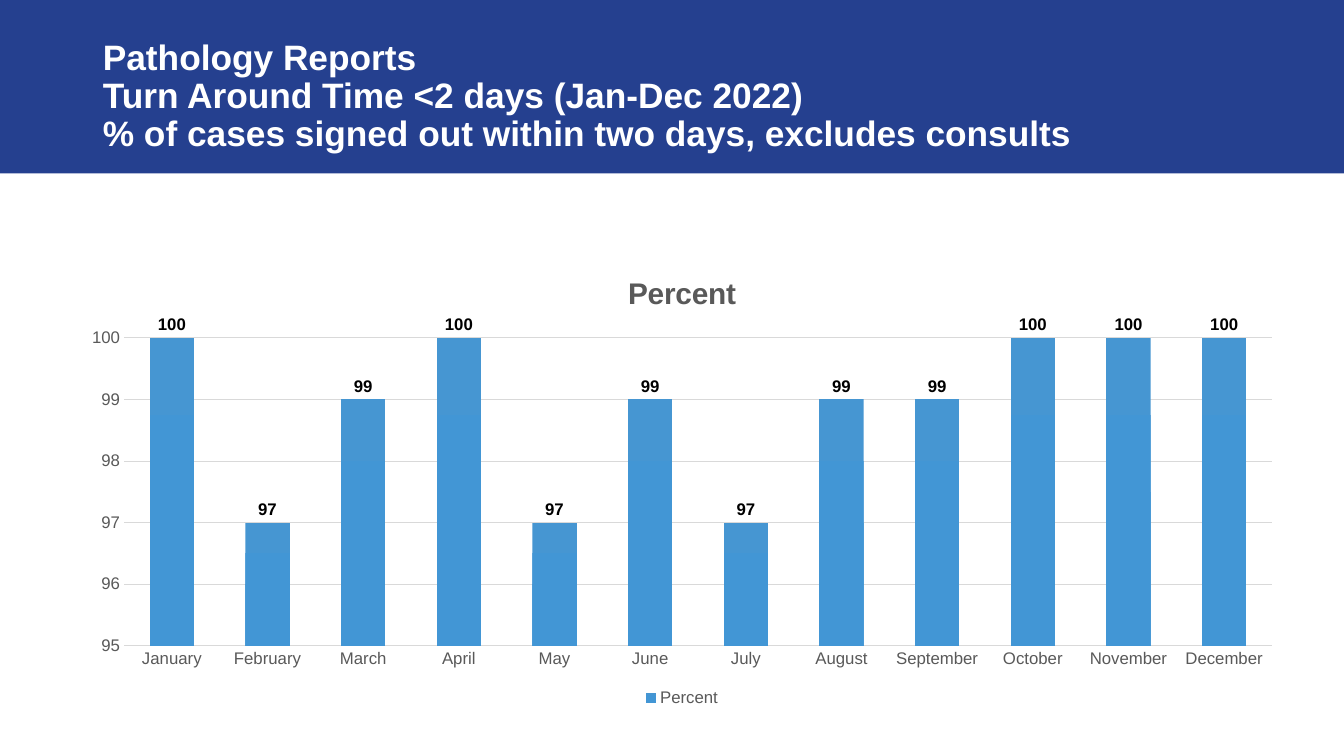
"""Builds the slide of monthly pathology report turnaround times."""
from copy import deepcopy
from dataclasses import dataclass

from pptx import Presentation
from pptx.chart.data import CategoryChartData
from pptx.dml.color import RGBColor
from pptx.enum.chart import XL_CHART_TYPE, XL_LABEL_POSITION, XL_LEGEND_POSITION, XL_TICK_MARK
from pptx.enum.shapes import MSO_SHAPE
from pptx.enum.text import MSO_ANCHOR, MSO_AUTO_SIZE, PP_ALIGN
from pptx.oxml import parse_xml
from pptx.oxml.ns import nsdecls, qn
from pptx.util import Inches, Pt

COLUMNS = XL_CHART_TYPE.COLUMN_CLUSTERED
OUTSIDE_END = XL_LABEL_POSITION.OUTSIDE_END
LEGEND_BOTTOM = XL_LEGEND_POSITION.BOTTOM
NO_TICK = XL_TICK_MARK.NONE
RECTANGLE = MSO_SHAPE.RECTANGLE
MIDDLE = MSO_ANCHOR.MIDDLE
NO_AUTOFIT = MSO_AUTO_SIZE.NONE
LEFT = PP_ALIGN.LEFT
TITLE_ONLY = 5

HEADING = (
    "Pathology Reports",
    "Turn Around Time <2 days (Jan-Dec 2022)",
    "% of cases signed out within two days, excludes consults",
)
MEASURE = "Percent"
MONTHLY_PERCENT = {
    "January": 100, "February": 97, "March": 99, "April": 100,
    "May": 97, "June": 99, "July": 97, "August": 99,
    "September": 99, "October": 100, "November": 100, "December": 100,
}
PLOT_AREA = {"x": 0.046, "y": 0.182, "w": 0.934, "h": 0.676}


@dataclass(frozen=True)
class Theme:
    """Colours, font and type sizes of the slide."""
    font: str = "Arial"
    banner: str = "25408F"
    heading: str = "FFFFFF"
    muted: str = "595959"
    label: str = "000000"
    grid: str = "D9D9D9"
    columns: tuple = ((0, "4696D2"), (0.5, "4296D5"), (1, "4295D4"))
    heading_size: float = 25.2
    chart_title_size: float = 21.3
    chart_size: float = 12


def assign(target, values):
    """Set each attribute of target from a dict of values."""
    for attribute, value in values.items():
        setattr(target, attribute, value)


def inches(*lengths):
    """Convert several lengths to inches."""
    return [Inches(length) for length in lengths]


class ReportSlide:
    """Holds the theme and the current slide and adds its elements."""

    def __init__(self, presentation, theme):
        """Add a slide with a title placeholder."""
        self.theme = theme
        self.slide = presentation.slides.add_slide(presentation.slide_layouts[TITLE_ONLY])

    def style_font(self, font, size, color, bold=False):
        """Apply the theme font with a size, colour and weight."""
        assign(font, {"name": self.theme.font, "size": Pt(size), "bold": bold})
        font.color.rgb = RGBColor.from_string(color)

    def style_line(self, line, width):
        """Give a chart line the grid colour."""
        line.color.rgb = RGBColor.from_string(self.theme.grid)
        line.width = Pt(width)

    def add_banner(self, left, top, width, height):
        """Add the coloured band behind the title."""
        shapes = self.slide.shapes
        banner = shapes.add_shape(RECTANGLE, *inches(left, top, width, height))
        banner.shadow.inherit = False
        banner.fill.solid()
        banner.fill.fore_color.rgb = RGBColor.from_string(self.theme.banner)
        banner.line.fill.background()
        shapes.element.insert(2, banner.element)

    def set_title(self, lines, left, top, width, height):
        """Place and format the title placeholder."""
        title = self.slide.shapes.title
        box = inches(left, top, width, height)
        assign(title, dict(zip(("left", "top", "width", "height"), box)))
        frame = title.text_frame
        frame.text = "\v".join(lines)
        assign(frame, {"word_wrap": True, "auto_size": NO_AUTOFIT, "vertical_anchor": MIDDLE})
        paragraph = frame.paragraphs[0]
        assign(paragraph, {"alignment": LEFT, "line_spacing": 0.9})
        for run in paragraph.runs:
            self.style_font(run.font, self.theme.heading_size, self.theme.heading, True)

    def add_column_chart(self, name, values, left, top, width, height):
        """Add the monthly column chart."""
        data = CategoryChartData(number_format="0")
        data.categories = list(values)
        data.add_series(name, list(values.values()))
        frame = self.slide.shapes.add_chart(COLUMNS, *inches(left, top, width, height), data)
        chart = frame.chart
        self.style_font(chart.font, self.theme.chart_size, self.theme.muted)
        self.style_chart_title(chart, name)
        self.style_axes(chart)
        self.style_columns(chart.plots[0])
        chart.has_legend = True
        assign(chart.legend, {"position": LEGEND_BOTTOM, "include_in_layout": False})
        self.style_font(chart.legend.font, self.theme.chart_size, self.theme.muted)
        self.place_plot(chart)

    def style_chart_title(self, chart, text):
        """Write the chart title and let it overlay the chart."""
        chart.has_title = True
        chart.chart_title.include_in_layout = True
        frame = chart.chart_title.text_frame
        frame.text = text
        run = frame.paragraphs[0].runs[0]
        self.style_font(run.font, self.theme.chart_title_size, self.theme.muted, True)

    def style_axes(self, chart):
        """Format both axes and the gridlines."""
        months, percent = chart.category_axis, chart.value_axis
        for axis in (months, percent):
            assign(axis, {"major_tick_mark": NO_TICK, "minor_tick_mark": NO_TICK})
            self.style_font(axis.tick_labels.font, self.theme.chart_size, self.theme.muted)
        self.style_line(months.format.line, 1)
        assign(percent, {"minimum_scale": 95, "maximum_scale": 100, "major_unit": 1,
                         "has_major_gridlines": True})
        percent.format.line.fill.background()
        self.style_line(percent.major_gridlines.format.line, 0.75)

    def style_columns(self, plot):
        """Format the columns, their gradient and their labels."""
        assign(plot, {"gap_width": 115, "vary_by_categories": False, "has_data_labels": True})
        labels = plot.data_labels
        assign(labels, {"show_value": True, "position": OUTSIDE_END})
        self.style_font(labels.font, self.theme.chart_size, self.theme.label, True)
        series = plot.series[0]
        series.invert_if_negative = False
        fill = series.format.fill
        fill.gradient()
        fill.gradient_angle = 270
        stops = next(series._element.iter(qn("a:gsLst")))
        stops.insert(1, deepcopy(stops[0]))
        for stop, (position, color) in zip(fill.gradient_stops, self.theme.columns):
            stop.position = position
            stop.color.rgb = RGBColor.from_string(color)

    def place_plot(self, chart):
        """Fix the inner plot area as fractions of the chart."""
        plot_area = next(chart._chartSpace.iter(qn("c:plotArea")))
        for layout in plot_area.findall(qn("c:layout")):
            plot_area.remove(layout)
        modes = "".join(f'<c:{side}Mode val="edge"/>' for side in "xy")
        sizes = "".join(f'<c:{side} val="{part}"/>' for side, part in PLOT_AREA.items())
        plot_area.insert(0, parse_xml(
            f'<c:layout {nsdecls("c")}><c:manualLayout><c:layoutTarget val="inner"/>'
            f"{modes}{sizes}</c:manualLayout></c:layout>"))


def main():
    """Build and save the presentation."""
    presentation = Presentation()
    assign(presentation, {"slide_width": Inches(13.33), "slide_height": Inches(7.5)})
    report = ReportSlide(presentation, Theme())
    report.add_banner(0, 0, 13.33, 1.72)
    report.set_title(HEADING, 0.92, 0.24, 11.5, 1.45)
    report.add_column_chart(MEASURE, MONTHLY_PERCENT, 0.67, 2.53, 12.19, 4.52)
    presentation.save("out.pptx")


if __name__ == "__main__":
    main()
